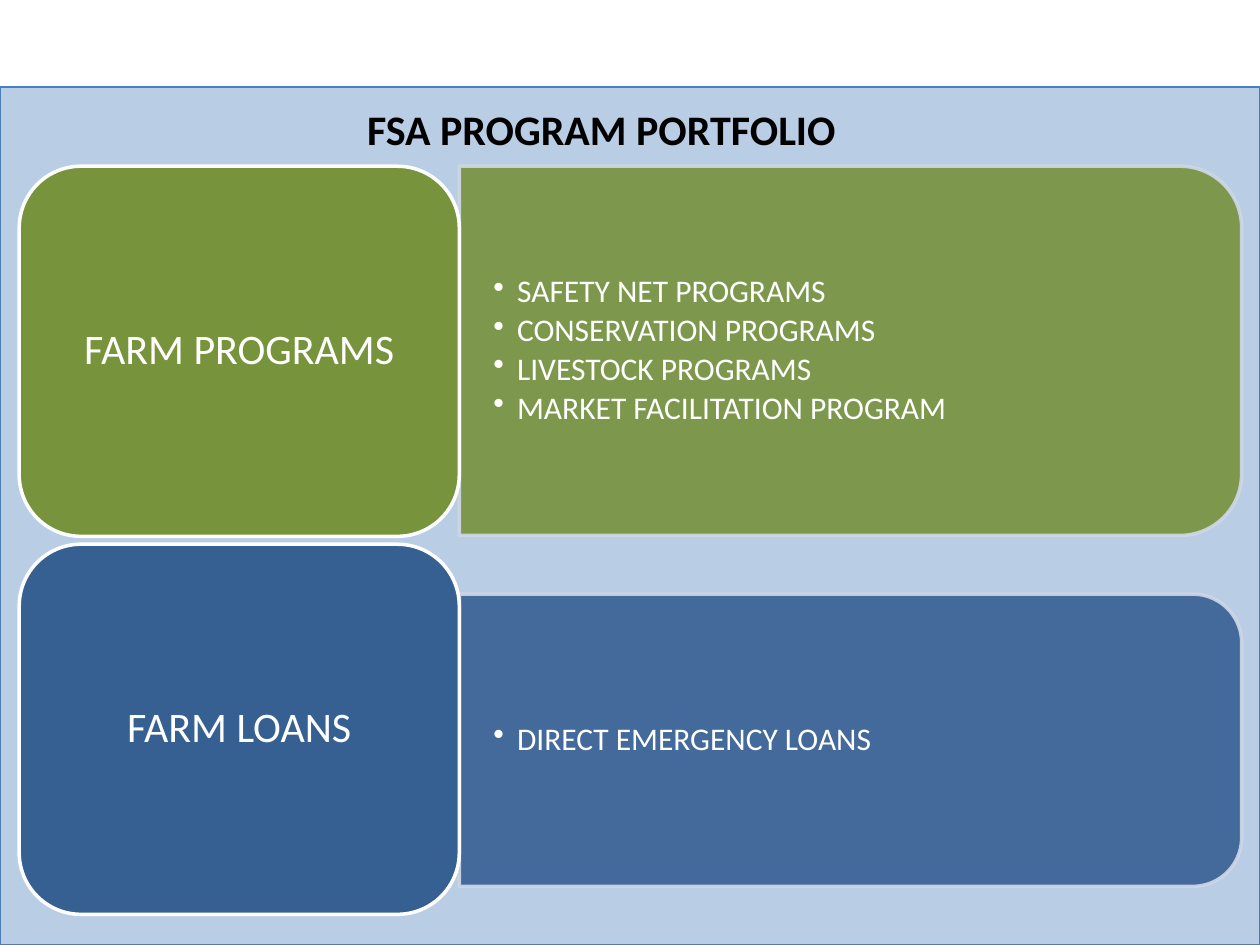
from pptx import Presentation
from pptx.dml.color import RGBColor
from pptx.enum.shapes import MSO_SHAPE
from pptx.enum.text import MSO_ANCHOR, PP_ALIGN
from pptx.oxml.ns import qn
from pptx.util import Pt
from lxml.etree import SubElement

TITLE = "FSA PROGRAM PORTFOLIO "
PROGRAMS = [
    {"name": "FARM PROGRAMS", "color": "77933C", "panel_height": 211,
     "panel_offset": 0,
     "items": ["SAFETY NET PROGRAMS", "CONSERVATION PROGRAMS",
               "LIVESTOCK PROGRAMS", "MARKET FACILITATION PROGRAM"]},
    {"name": "FARM LOANS", "color": "376092", "panel_height": 167,
     "panel_offset": 28.5,
     "items": ["DIRECT EMERGENCY LOANS"]},
]

LABEL_LEFT, LABEL_TOP = 11, 95
LABEL_WIDTH, LABEL_HEIGHT = 251.5, 211.5
ROW_STEP = 216
PANEL_LEFT, PANEL_WIDTH = 262.5, 447


def rgb(value):
    return RGBColor.from_string(value)


def add_block(page, kind, left, top, width, height, fill, line, weight, opacity=100):
    block = page.shapes.add_shape(kind, Pt(left), Pt(top), Pt(width), Pt(height))
    block.shadow.inherit = False
    block.fill.solid()
    block.fill.fore_color.rgb = rgb(fill)
    block.line.color.rgb = rgb(line)
    block.line.width = Pt(weight)
    if opacity < 100:
        for color in list(block._element.spPr.iter(qn("a:srgbClr"))):
            SubElement(color, qn("a:alpha"), val=str(opacity * 1000))
    return block


def add_bullet(para):
    properties = para._p.get_or_add_pPr()
    properties.set("marL", str(Pt(13.5)))
    properties.set("indent", str(Pt(-13.5)))
    SubElement(properties, qn("a:buChar"), char="•")


def write(box, text, size=24, color="FFFFFF", bold=False, align=PP_ALIGN.CENTER,
          anchor=MSO_ANCHOR.MIDDLE, spacing=0.9, after=0, bullets=False):
    frame = box.text_frame
    frame.word_wrap = True
    frame.vertical_anchor = anchor
    for index, line in enumerate(text.split("\n")):
        para = frame.add_paragraph() if index else frame.paragraphs[0]
        para.alignment = align
        para.line_spacing = spacing
        para.space_after = Pt(after)
        if bullets:
            add_bullet(para)
        span = para.add_run()
        span.text = line
        span.font.name = "Calibri"
        span.font.size = Pt(size)
        span.font.bold = bold
        span.font.color.rgb = rgb(color)


def add_program(page, row, program):
    top = LABEL_TOP + row * ROW_STEP
    height = program["panel_height"]
    panel_top = top + program["panel_offset"]
    shift = (PANEL_WIDTH - height) / 2
    panel = add_block(page, MSO_SHAPE.ROUND_2_SAME_RECTANGLE,
                      PANEL_LEFT + shift, panel_top - shift, height, PANEL_WIDTH,
                      program["color"], "D0D8E8", 2, opacity=90)
    panel.rotation = 90

    inset = height / 20
    details = page.shapes.add_textbox(Pt(PANEL_LEFT), Pt(panel_top + inset),
                                      Pt(PANEL_WIDTH - inset), Pt(height - 2 * inset))
    frame = details.text_frame
    frame.margin_left = frame.margin_right = Pt(19.5)
    frame.margin_top = frame.margin_bottom = Pt(10)
    write(details, "\n".join(program["items"]), size=18,
          align=PP_ALIGN.LEFT, after=2.7, bullets=True)

    label = add_block(page, MSO_SHAPE.ROUNDED_RECTANGLE, LABEL_LEFT, top,
                      LABEL_WIDTH, LABEL_HEIGHT, program["color"], "FFFFFF", 2)
    write(label, program["name"])


def main():
    deck = Presentation()
    deck.slide_width, deck.slide_height = Pt(720), Pt(540)
    page = deck.slides.add_slide(deck.slide_layouts[6])
    add_block(page, MSO_SHAPE.RECTANGLE, 0, 49.7, 720, 490.3, "B9CDE5", "4B7EBC", 0.75)
    for row, program in reversed(list(enumerate(PROGRAMS))):
        add_program(page, row, program)
    title = page.shapes.add_textbox(Pt(103), Pt(55.5), Pt(486.7), Pt(36))
    write(title, TITLE, color="000000", bold=True, anchor=MSO_ANCHOR.TOP, spacing=1.0)
    deck.save("out.pptx")


if __name__ == "__main__":
    main()
